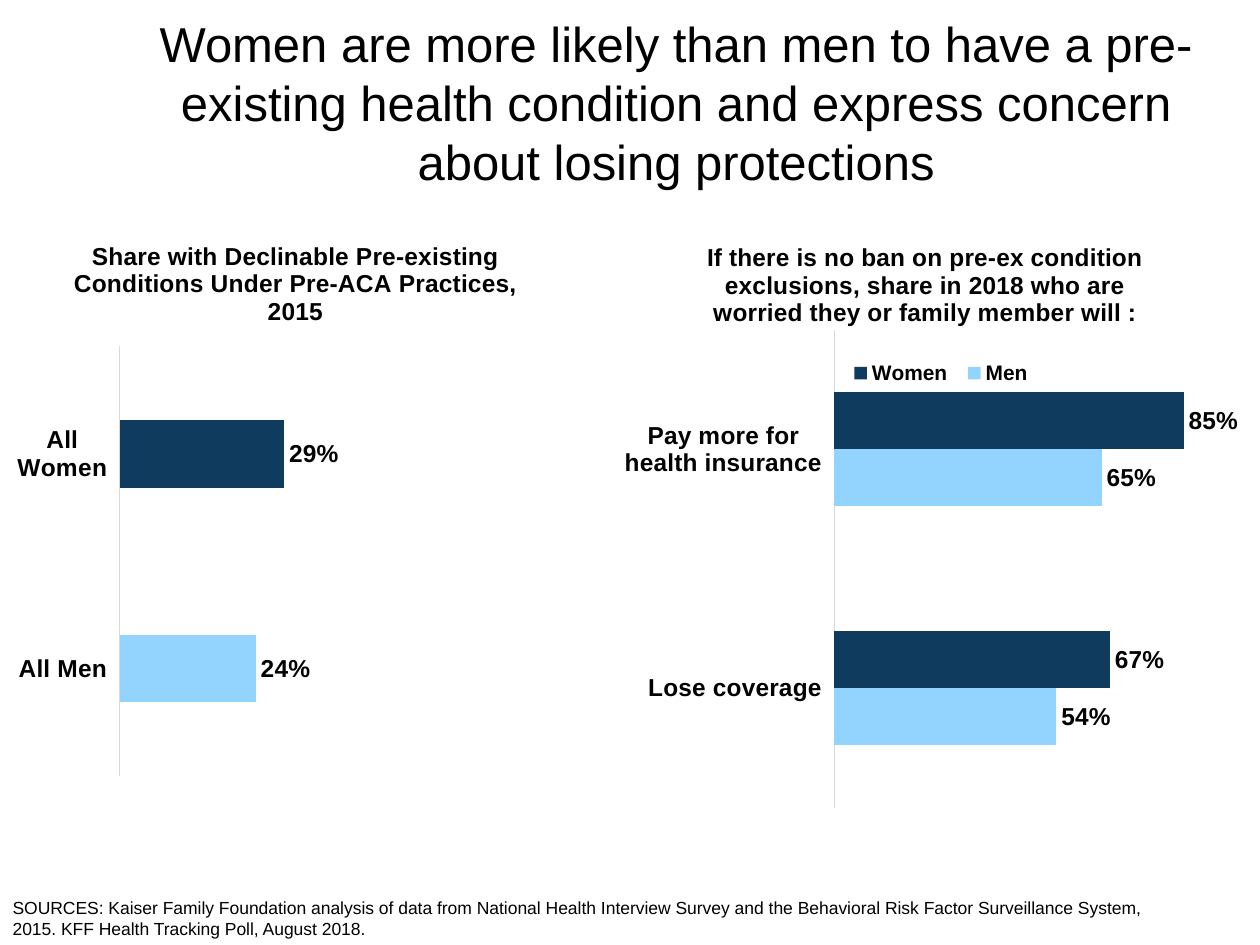
from dataclasses import dataclass

from pptx import Presentation
from pptx.chart.data import CategoryChartData
from pptx.dml.color import RGBColor
from pptx.enum.chart import XL_CHART_TYPE, XL_LABEL_POSITION, XL_LEGEND_POSITION, XL_TICK_LABEL_POSITION, XL_TICK_MARK
from pptx.enum.text import MSO_ANCHOR, PP_ALIGN
from pptx.oxml import parse_xml
from pptx.oxml.ns import nsdecls, qn
from pptx.util import Inches, Pt

BAR = XL_CHART_TYPE.BAR_CLUSTERED
OUT = XL_LABEL_POSITION.OUTSIDE_END
BOTTOM = XL_LEGEND_POSITION.BOTTOM
NO_TICK = XL_TICK_MARK.NONE
LOW = XL_TICK_LABEL_POSITION.LOW


@dataclass(frozen=True)
class Theme:
    font: str = "Arial"
    ink: RGBColor = RGBColor(0, 0, 0)
    women: RGBColor = RGBColor(0x0E, 0x3B, 0x5E)
    men: RGBColor = RGBColor(0x93, 0xD4, 0xFF)
    axis: RGBColor = RGBColor(0xD9, 0xD9, 0xD9)
    head: int = 28
    label: int = 14
    key: int = 12
    note: int = 10


THEME = Theme()


def style(font, size, bold=False):
    font.name = THEME.font
    font.size = Pt(size)
    font.bold = bold
    font.color.rgb = THEME.ink


def fill(part, color):
    part.format.fill.solid()
    part.format.fill.fore_color.rgb = color


def write(holder, box, text, size, align, anchor):
    holder.left, holder.top, holder.width, holder.height = map(Inches, box)
    frame = holder.text_frame
    frame.word_wrap = True
    frame.vertical_anchor = anchor
    frame.text = text
    para = frame.paragraphs[0]
    para.alignment = align
    para.space_before = Pt(0)
    props = para._p.get_or_add_pPr()
    props.set("marL", "0")
    props.set("indent", "0")
    props.append(parse_xml(f"<a:buNone {nsdecls('a')}/>"))
    style(para.runs[0].font, size)


def lay(node, after, inner=False, **spot):
    for old in node.findall(qn("c:layout")):
        node.remove(old)
    target = '<c:layoutTarget val="inner"/>' if inner else ""
    modes = "".join(f'<c:{key}Mode val="edge"/>' for key in "xy")
    sizes = "".join(f'<c:{key} val="{val}"/>' for key, val in spot.items())
    layout = parse_xml(
        f"<c:layout {nsdecls('c')}><c:manualLayout>{target}{modes}{sizes}"
        "</c:manualLayout></c:layout>")
    if after:
        node.find(qn(after)).addnext(layout)
    else:
        node.insert(0, layout)


def add_bars(slide, box, title, spot, plot, cats, series):
    data = CategoryChartData(number_format="0%")
    data.categories = cats
    for name, vals, _ in series:
        data.add_series(name, vals)
    chart = slide.shapes.add_chart(BAR, *map(Inches, box), data).chart
    style(chart.font, THEME.note)
    chart.has_legend = False

    frame = chart.chart_title.text_frame
    frame.text = title
    style(frame.paragraphs[0].runs[0].font, THEME.label, True)
    chart.chart_title.include_in_layout = False
    lay(chart.chart_title._element, "c:tx", x=spot[0], y=spot[1])
    lay(chart._chartSpace.chart.plotArea, None, True, **dict(zip("xywh", plot)))

    axis = chart.category_axis
    axis.major_tick_mark = axis.minor_tick_mark = NO_TICK
    axis.tick_label_position = LOW
    axis.format.line.color.rgb = THEME.axis
    axis.format.line.width = Pt(0.75)
    style(axis.tick_labels.font, THEME.label, True)

    scale = chart.value_axis
    scale.minimum_scale, scale.maximum_scale = 0, 0.9
    scale.has_major_gridlines = False
    scale.visible = False

    bars = chart.plots[0]
    bars.gap_width, bars.overlap = 219, 0
    bars.vary_by_categories = False
    for item, (_, _, color) in zip(bars.series, series):
        fill(item, color)
        labels = item.data_labels
        labels.show_value = True
        labels.position = OUT
        labels.number_format = "0%"
        labels.number_format_is_linked = False
        style(labels.font, THEME.label, True)
    return chart


def add_share(slide, box):
    chart = add_bars(
        slide, box,
        "Share with Declinable Pre-existing Conditions Under Pre-ACA Practices, 2015",
        (0.11, 0.08), (0.19, 0.24, 0.81, 0.62), ["All Men", "All Women"],
        [("Series 1", (0.24, 0.29), THEME.women)])
    fill(chart.plots[0].series[0].points[0], THEME.men)


def add_worry(slide, box):
    chart = add_bars(
        slide, box,
        "If there is no ban on pre-ex condition exclusions, share in 2018 "
        "who are worried they or family member will :",
        (0.15, 0.04), (0.36, 0.18, 0.59, 0.72),
        ["Lose coverage", "Pay more for health insurance"],
        [("Men", (0.54, 0.65), THEME.men), ("Women", (0.67, 0.85), THEME.women)])
    chart.has_legend = True
    legend = chart.legend
    legend.position = BOTTOM
    legend.include_in_layout = False
    style(legend.font, THEME.key, True)
    lay(legend._element, "c:legendPos", x=0.37, y=0.21, w=0.32, h=0.07)


def main():
    deck = Presentation()
    deck.slide_width, deck.slide_height = Inches(10), Inches(7.5)
    slide = deck.slides.add_slide(deck.slide_layouts[1])
    write(slide.shapes.title, (0.83, 0.06, 9.07, 1),
          "Women are more likely than men to have a pre-existing health condition "
          "and express concern about losing protections",
          THEME.head, PP_ALIGN.CENTER, MSO_ANCHOR.TOP)
    add_share(slide, (0, 1.43, 5, 5.5))
    write(slide.placeholders[1], (0, 6.9, 9.17, 0.6),
          "SOURCES: Kaiser Family Foundation analysis of data from National Health "
          "Interview Survey and the Behavioral Risk Factor Surveillance System, 2015. "
          "KFF Health Tracking Poll, August 2018.",
          THEME.note, PP_ALIGN.LEFT, MSO_ANCHOR.BOTTOM)
    add_worry(slide, (4.83, 1.67, 5, 5.27))
    deck.save("out.pptx")


if __name__ == "__main__":
    main()
